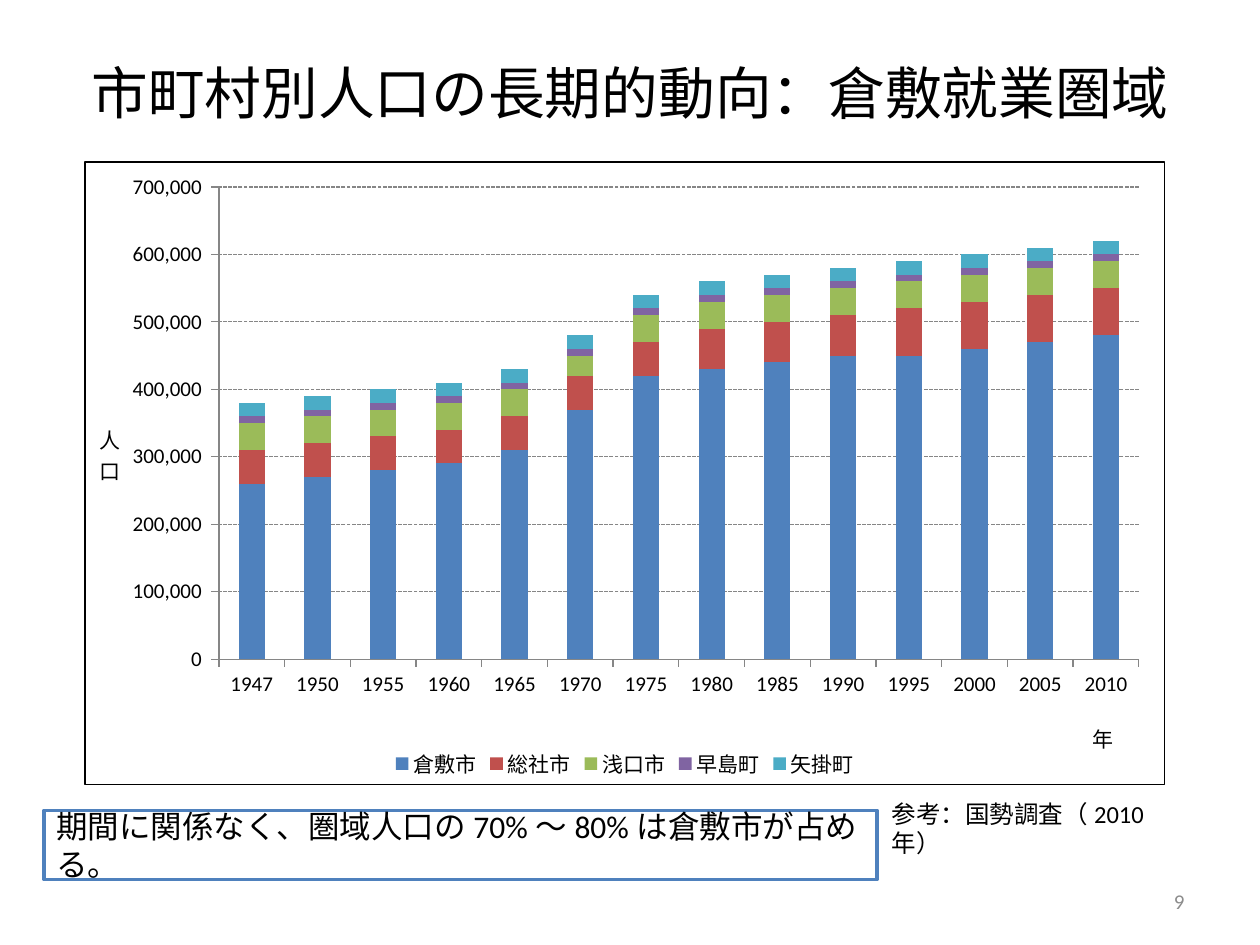
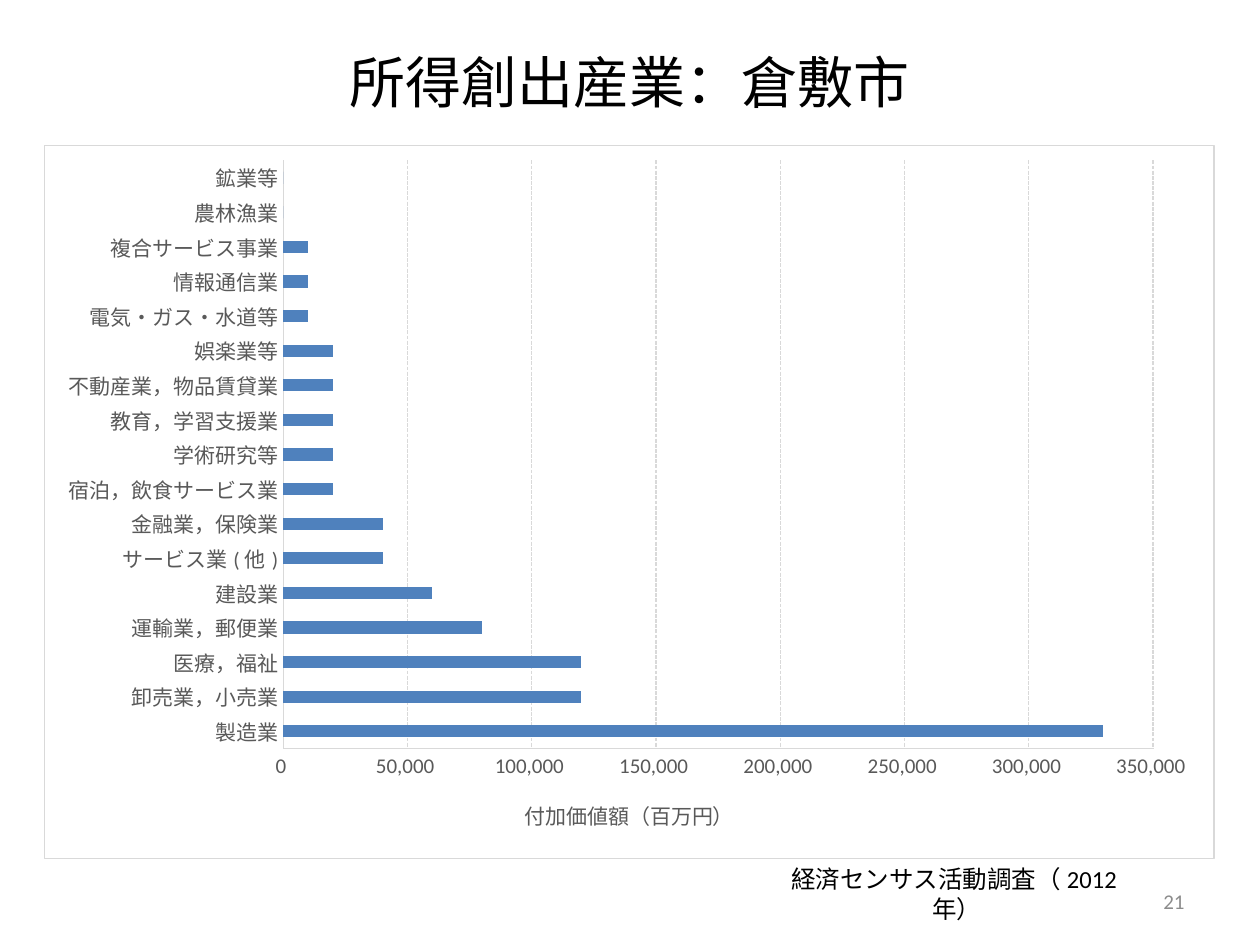
from lxml.etree import SubElement
from pptx import Presentation
from pptx.chart.data import CategoryChartData
from pptx.dml.color import RGBColor
from pptx.enum.chart import XL_CHART_TYPE, XL_LEGEND_POSITION, XL_TICK_MARK
from pptx.enum.dml import MSO_LINE
from pptx.enum.shapes import MSO_SHAPE
from pptx.enum.text import MSO_ANCHOR, PP_ALIGN
from pptx.oxml import parse_xml
from pptx.oxml.ns import nsdecls, qn
from pptx.util import Pt

FONT = "Calibri"
BLACK = RGBColor(0x00, 0x00, 0x00)
WHITE = RGBColor(0xFF, 0xFF, 0xFF)
PAGE_GREY = RGBColor(0x8C, 0x8C, 0x8C)
AXIS_GREY = RGBColor(0x86, 0x86, 0x86)
LABEL_GREY = RGBColor(0x59, 0x59, 0x59)
PALE_GREY = RGBColor(0xD9, 0xD9, 0xD9)
BLUE = RGBColor(0x4F, 0x81, 0xBD)
RED = RGBColor(0xC0, 0x50, 0x4D)
GREEN = RGBColor(0x9B, 0xBB, 0x59)
PURPLE = RGBColor(0x80, 0x64, 0xA2)
TEAL = RGBColor(0x4B, 0xAC, 0xC6)

POPULATION_TITLE = "市町村別人口の長期的動向：倉敷就業圏域"
POPULATION_SOURCE = "参考：国勢調査（2010年）"
POPULATION_FINDING = "期間に関係なく、圏域人口の70%～80%は倉敷市が占める。"
CENSUS_YEARS = ["1947"] + [str(year) for year in range(1950, 2011, 5)]
# Unit: 10,000 people
POPULATION = [
    ("倉敷市", BLUE, [26, 27, 28, 29, 31, 37, 42, 43, 44, 45, 45, 46, 47, 48]),
    ("総社市", RED, [5] * 7 + [6] * 3 + [7] * 4),
    ("浅口市", GREEN, [4] * 5 + [3] + [4] * 8),
    ("早島町", PURPLE, [1] * 14),
    ("矢掛町", TEAL, [2] * 14),
]

INCOME_TITLE = "所得創出産業：倉敷市"
INCOME_SOURCE = "経済センサス活動調査（2012年）"
# Unit: 10,000 million yen
VALUE_ADDED = [
    ("製造業", 33), ("卸売業，小売業", 12), ("医療，福祉", 12),
    ("運輸業，郵便業", 8), ("建設業", 6), ("サービス業(他)", 4),
    ("金融業，保険業", 4), ("宿泊，飲食サービス業", 2), ("学術研究等", 2),
    ("教育，学習支援業", 2), ("不動産業，物品賃貸業", 2), ("娯楽業等", 2),
    ("電気・ガス・水道等", 1), ("情報通信業", 1), ("複合サービス事業", 1),
    ("農林漁業", 0), ("鉱業等", 0),
]
UNIT = 10000


def write(shape, text, size, color=BLACK, align=PP_ALIGN.LEFT):
    frame = shape.text_frame
    frame.word_wrap = True
    frame.vertical_anchor = MSO_ANCHOR.MIDDLE
    paragraph = frame.paragraphs[0]
    paragraph.alignment = align
    run = paragraph.add_run()
    run.text = text
    run.font.name, run.font.size = FONT, Pt(size)
    run.font.color.rgb = color


def add_text(slide, box, *style):
    write(slide.shapes.add_textbox(*map(Pt, box)), *style)


def add_panel(slide, box, outline, *style):
    panel = slide.shapes.add_shape(MSO_SHAPE.RECTANGLE, *map(Pt, box))
    panel.shadow.inherit = False
    panel.fill.solid()
    panel.fill.fore_color.rgb = WHITE
    if outline is None:
        panel.line.fill.background()
    else:
        panel.line.color.rgb, panel.line.width = outline, Pt(2)
    write(panel, *style)


def start_slide(deck, title, title_size, title_height, number):
    slide = deck.slides.add_slide(deck.slide_layouts[6])
    add_text(slide, (36, 21.6, 648, title_height), title, title_size, BLACK, PP_ALIGN.CENTER)
    add_text(slide, (516, 500.4, 168, 28.8), number, 12, PAGE_GREY, PP_ALIGN.RIGHT)
    return slide


def manual_layout(**settings):
    layout = parse_xml(f"<c:layout {nsdecls('c')}/>")
    manual = SubElement(layout, qn("c:manualLayout"))
    for tag, value in settings.items():
        SubElement(manual, qn(f"c:{tag}")).set("val", str(value))
    return layout


def place_plot(chart, x, y, w, h):
    plot_area = chart.element.xpath("c:chart/c:plotArea")[0]
    for old in plot_area.findall(qn("c:layout")):
        plot_area.remove(old)
    plot_area.insert(0, manual_layout(
        layoutTarget="inner", xMode="edge", yMode="edge", x=x, y=y, w=w, h=h))


def title_axis(axis, text, color, position=None, stacked=False):
    title = axis.axis_title
    run = title.text_frame.paragraphs[0].add_run()
    run.text = text
    run.font.name, run.font.size, run.font.bold = FONT, Pt(12), False
    run.font.color.rgb = color
    if stacked:
        body = title.element.find(".//" + qn("a:bodyPr"))
        body.set("rot", "0")
        body.set("vert", "wordArtVertRtl")
    if position:
        for old in title.element.findall(qn("c:layout")):
            title.element.remove(old)
        x, y = position
        title.element.find(qn("c:tx")).addnext(
            manual_layout(xMode="edge", yMode="edge", x=x, y=y))


def frame_chart(chart, color):
    chart.element.find(qn("c:chart")).addnext(parse_xml(
        f"<c:spPr {nsdecls('c', 'a')}><a:solidFill><a:srgbClr val='{WHITE}'/></a:solidFill>"
        f"<a:ln w='{Pt(0.75)}'><a:solidFill><a:srgbClr val='{color}'/></a:solidFill></a:ln></c:spPr>"))


def add_bars(slide, box, kind, categories, series, gap, top, step, line, label, border, tick):
    """Add a bar chart; series holds (name, colour, values in UNIT)."""
    data = CategoryChartData(number_format="#,##0_ ")
    data.categories = categories
    for name, _, values in series:
        data.add_series(name, [value * UNIT for value in values])
    chart = slide.shapes.add_chart(kind, *map(Pt, box), data).chart
    chart.has_title = chart.has_legend = False
    chart.font.name, chart.font.size = FONT, Pt(12)
    chart.font.color.rgb = label
    frame_chart(chart, border)

    plot = chart.plots[0]
    plot.gap_width = gap
    plot.vary_by_categories = False
    for bars, (_, color, _) in zip(plot.series, series):
        bars.format.fill.solid()
        bars.format.fill.fore_color.rgb = color
        bars.invert_if_negative = False

    values = chart.value_axis
    for axis in (chart.category_axis, values):
        axis.major_tick_mark, axis.minor_tick_mark = tick, XL_TICK_MARK.NONE
        axis.tick_labels.font.name, axis.tick_labels.font.size = FONT, Pt(12)
        axis.tick_labels.font.color.rgb = label
        axis.format.line.color.rgb, axis.format.line.width = line, Pt(0.75)
    values.minimum_scale, values.maximum_scale, values.major_unit = 0, top, step
    values.tick_labels.number_format = "#,##0_ "
    values.tick_labels.number_format_is_linked = False
    values.has_major_gridlines = True
    grid = values.major_gridlines.format.line
    grid.color.rgb, grid.width = line, Pt(0.75)
    grid.dash_style = MSO_LINE.SQUARE_DOT
    return chart


def build_population(deck):
    slide = start_slide(deck, POPULATION_TITLE, 32.4, 61.2, "9")
    add_text(slide, (502.5, 459.4, 163.5, 28), POPULATION_SOURCE, 14)
    chart = add_bars(
        slide, (48.2, 92.2, 617.8, 356.4), XL_CHART_TYPE.COLUMN_STACKED, CENSUS_YEARS,
        POPULATION, 150, 700000, 100000, AXIS_GREY, BLACK, BLACK, XL_TICK_MARK.OUTSIDE)
    chart.plots[0].overlap = 100
    place_plot(chart, 0.124, 0.04, 0.852, 0.759)
    title_axis(chart.category_axis, "年", BLACK, (0.93, 0.89))
    title_axis(chart.value_axis, "人口", BLACK, (0.01, 0.41), stacked=True)
    chart.has_legend = True
    chart.legend.position = XL_LEGEND_POSITION.BOTTOM
    chart.legend.include_in_layout = False
    chart.legend.font.name, chart.legend.font.size = FONT, Pt(12)
    add_panel(slide, (25.2, 463, 476, 39.6), BLUE, POPULATION_FINDING, 18)


def build_income(deck):
    slide = start_slide(deck, INCOME_TITLE, 32, 49.7, "21")
    add_panel(slide, (439.2, 496.8, 215.3, 28), None, INCOME_SOURCE, 14, BLACK, PP_ALIGN.CENTER)
    industries, amounts = zip(*VALUE_ADDED)
    chart = add_bars(
        slide, (25.2, 82.8, 668.9, 408.2), XL_CHART_TYPE.BAR_CLUSTERED, industries,
        [("付加価値額", BLUE, amounts)], 182, 350000, 50000,
        PALE_GREY, LABEL_GREY, PALE_GREY, XL_TICK_MARK.NONE)
    place_plot(chart, 0.204, 0.021, 0.744, 0.825)
    title_axis(chart.value_axis, "付加価値額（百万円）", LABEL_GREY)


def main():
    deck = Presentation()
    deck.slide_width, deck.slide_height = Pt(720), Pt(540)
    build_population(deck)
    build_income(deck)
    deck.save("out.pptx")


if __name__ == "__main__":
    main()
